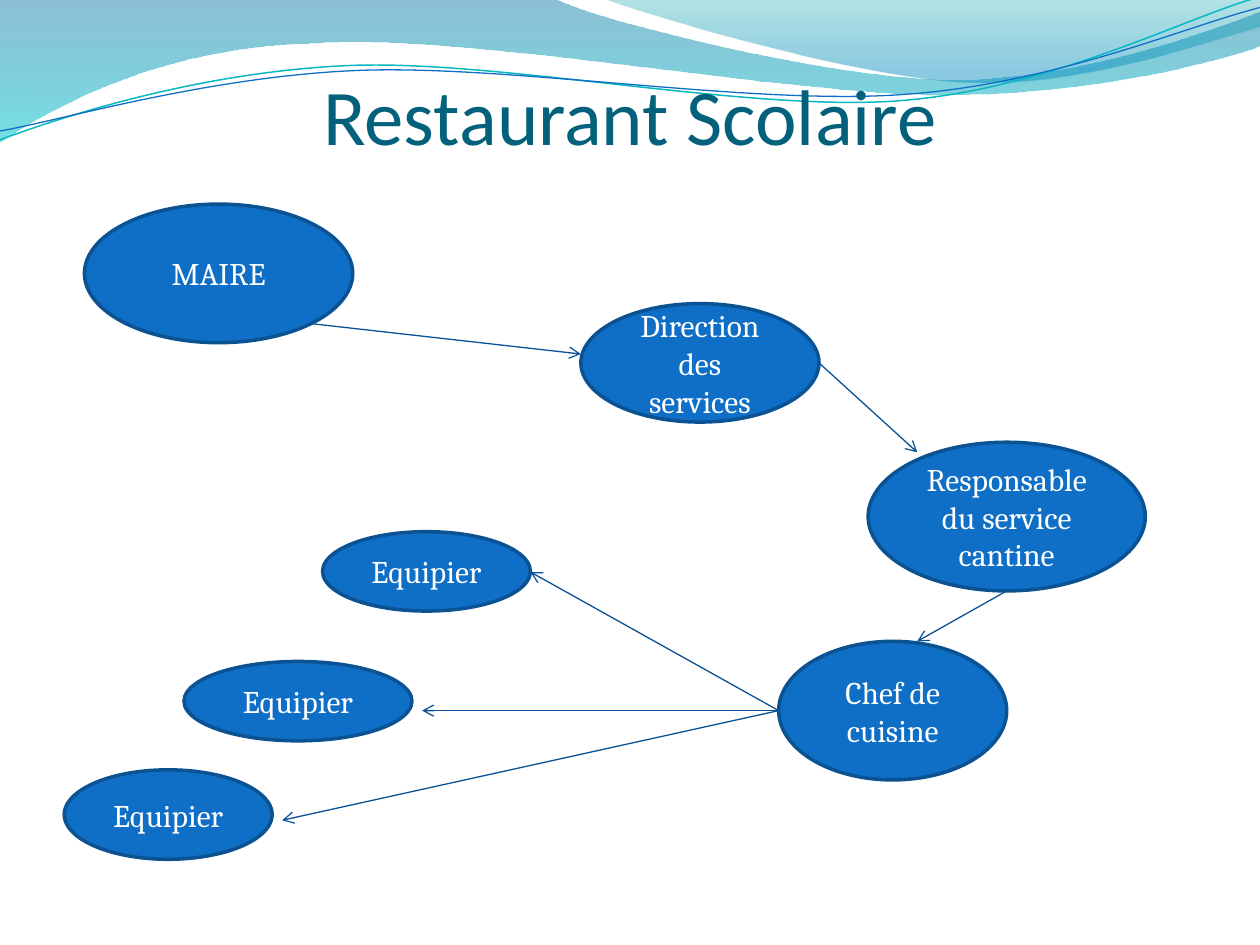
from math import cos, radians, sin
from lxml.etree import SubElement
from pptx import Presentation
from pptx.dml.color import RGBColor
from pptx.enum.shapes import MSO_CONNECTOR, MSO_SHAPE
from pptx.enum.text import MSO_ANCHOR, MSO_AUTO_SIZE, PP_ALIGN
from pptx.oxml.ns import qn
from pptx.util import Inches, Pt

COLORS = {
    "title": "04617B", "node": "0F6FC6", "border": "0B5292",
    "arrow": "095295", "text": "FFFFFF", "teal": "0AB8BF",
    "band_top": "0074A1", "band_bottom": "00C6CF",
    "corner_top": "00A1A9", "corner_bottom": "008BBF",
}
TILT = -2.7

BAND = [
    (0, 0), (4.4, -0.01),
    (4.76, 0.17, 6.64, 0.63, 7.58, 0.63), (8.53, 0.63, 9.58, 0.26, 10, 0.09),
    (10.01, 0.36),
    (9.83, 0.44, 8.7, 0.76, 7.46, 0.75), (6.22, 0.75, 3.82, 0.28, 2.57, 0.34),
    (1.29, 0.36, 0.46, 0.83, -0.01, 1.13), (0, 0),
]
CORNER = [
    (4.79, -0.01), (5.09, 0.11, 6.82, 0.62, 7.69, 0.65),
    (8.56, 0.69, 9.61, 0.32, 10, 0.21), (10, 0), (4.79, -0.01),
]
TEAL_WAVE = [
    (0, 1.11), (0.48, 0.93, 1.58, 0.57, 2.77, 0.52),
    (3.95, 0.47, 5.93, 0.89, 7.13, 0.8), (8.33, 0.71, 9.38, 0.15, 9.98, -0.02),
]
BLUE_WAVE = [
    (0, 1.04), (0.47, 0.96, 1.64, 0.61, 2.83, 0.56),
    (4.03, 0.51, 5.97, 0.84, 7.17, 0.75), (8.36, 0.67, 9.41, 0.21, 10, 0.06),
]
NODES = [
    ("MAIRE", 0.67, 1.62, 2.13, 1.1),
    ("Direction des services", 4.61, 2.41, 1.89, 0.94),
    ("Responsable du service cantine", 6.89, 3.51, 2.2, 1.18),
    ("Chef de cuisine", 6.18, 5.09, 1.81, 1.1),
    ("Equipier", 2.56, 4.22, 1.65, 0.63),
    ("Equipier", 1.46, 5.25, 1.81, 0.63),
    ("Equipier", 0.51, 6.11, 1.65, 0.71),
]
CHEF_LEFT = (6.18, 5.64)
ARROWS = [
    ((2.48, 2.57), (4.61, 2.81)),
    ((6.5, 2.88), (7.28, 3.59)),
    ((7.99, 4.69), (7.28, 5.09)),
    (CHEF_LEFT, (4.21, 4.54)),
    (CHEF_LEFT, (3.35, 5.64)),
    (CHEF_LEFT, (2.24, 6.51)),
]


def rgb(name):
    return RGBColor.from_string(COLORS[name])


def turn(path, degrees, cx, cy):
    c, s = cos(radians(degrees)), sin(radians(degrees))
    turned = []
    for step in path:
        pairs = zip(step[::2], step[1::2])
        moved = [(cx + (x - cx) * c - (y - cy) * s, cy + (x - cx) * s + (y - cy) * c)
                 for x, y in pairs]
        turned.append(sum(moved, ()))
    return turned


class Chart:
    title_font = {"name": "Calibri", "size": Pt(45), "bold": False}
    node_font = {"name": "Cambria", "size": Pt(18)}
    title_frame = {
        "auto_size": MSO_AUTO_SIZE.NONE, "word_wrap": True,
        "vertical_anchor": MSO_ANCHOR.BOTTOM, "margin_left": 0, "margin_right": 0,
        "margin_top": Inches(0.05), "margin_bottom": Inches(0.74),
    }
    node_frame = {"word_wrap": True, "vertical_anchor": MSO_ANCHOR.MIDDLE}

    def __init__(self, slide):
        self.slide = slide
        self.shapes = slide.shapes

    def apply(self, target, values):
        for name, value in values.items():
            setattr(target, name, value)

    def text(self, sp, text, frame, font, color):
        tf = sp.text_frame
        self.apply(tf, frame)
        p = tf.paragraphs[0]
        p.alignment = PP_ALIGN.CENTER
        r = p.add_run()
        r.text = text
        self.apply(r.font, font)
        r.font.color.rgb = rgb(color)

    def outline(self, sp, color, width):
        sp.line.color.rgb = rgb(color)
        sp.line.width = Pt(width)

    def freeform(self, path, close):
        points = [(Inches(x), Inches(y))
                  for step in path for x, y in zip(step[::2], step[1::2])]
        builder = self.shapes.build_freeform(*points[0])
        builder.add_line_segments(points[1:], close=close)
        sp = builder.convert_to_shape()
        sp.shadow.inherit = False
        lines = iter(list(sp._element.iter(qn("a:lnTo"))))
        for step in path[1:]:
            segment = next(lines)
            if len(step) == 6:
                segment.tag = qn("a:cubicBezTo")
                for _ in range(2):
                    extra = next(lines)
                    segment.append(extra[0])
                    extra.getparent().remove(extra)
        return sp

    def band(self, path, stops):
        sp = self.freeform(path, True)
        sp.line.fill.background()
        sp.fill.gradient()
        sp.fill.gradient_angle = 270
        for stop, (position, color, _) in zip(sp.fill.gradient_stops, stops):
            stop.position = position
            stop.color.rgb = rgb(color)
        for clr, (_, _, opacity) in zip(sp._element.spPr.iter(qn("a:srgbClr")), stops):
            SubElement(clr, qn("a:alpha")).set("val", str(opacity * 1000))

    def wave(self, path, center, color, width):
        sp = self.freeform(turn(path, -TILT, *center), False)
        sp.rotation = TILT
        sp.fill.background()
        self.outline(sp, color, width)

    def title(self, text, x, y, w, h):
        sp = self.shapes.title
        place = dict(zip(("left", "top", "width", "height"), map(Inches, (x, y, w, h))))
        self.apply(sp, place)
        self.text(sp, text, self.title_frame, self.title_font, "title")
        self.shapes._spTree.append(sp._element)

    def node(self, text, x, y, w, h):
        sp = self.shapes.add_shape(MSO_SHAPE.OVAL, *map(Inches, (x, y, w, h)))
        sp.shadow.inherit = False
        sp.fill.solid()
        sp.fill.fore_color.rgb = rgb("node")
        self.outline(sp, "border", 2)
        self.text(sp, text, self.node_frame, self.node_font, "text")

    def arrow(self, start, end):
        cxn = self.shapes.add_connector(MSO_CONNECTOR.STRAIGHT, *map(Inches, start + end))
        self.outline(cxn, "arrow", 0.75)
        SubElement(cxn.line._get_or_add_ln(), qn("a:tailEnd")).set("type", "arrow")
        SubElement(cxn._element.spPr, qn("a:effectLst"))


def main():
    prs = Presentation()
    prs.slide_width, prs.slide_height = Inches(10), Inches(7.5)
    chart = Chart(prs.slides.add_slide(prs.slide_layouts[5]))
    chart.band(BAND, [(0, "band_top", 45), (1, "band_bottom", 55)])
    chart.band(CORNER, [(0, "corner_top", 30), (0.8, "corner_bottom", 45)])
    chart.wave(TEAL_WAVE, (4.99, 0.58), "teal", 0.85)
    chart.wave(BLUE_WAVE, (5, 0.59), "node", 0.75)
    chart.title("Restaurant Scolaire", 0.5, 0.77, 9, 1.25)
    for node in NODES:
        chart.node(*node)
    for start, end in ARROWS:
        chart.arrow(start, end)
    prs.save("out.pptx")


if __name__ == "__main__":
    main()
